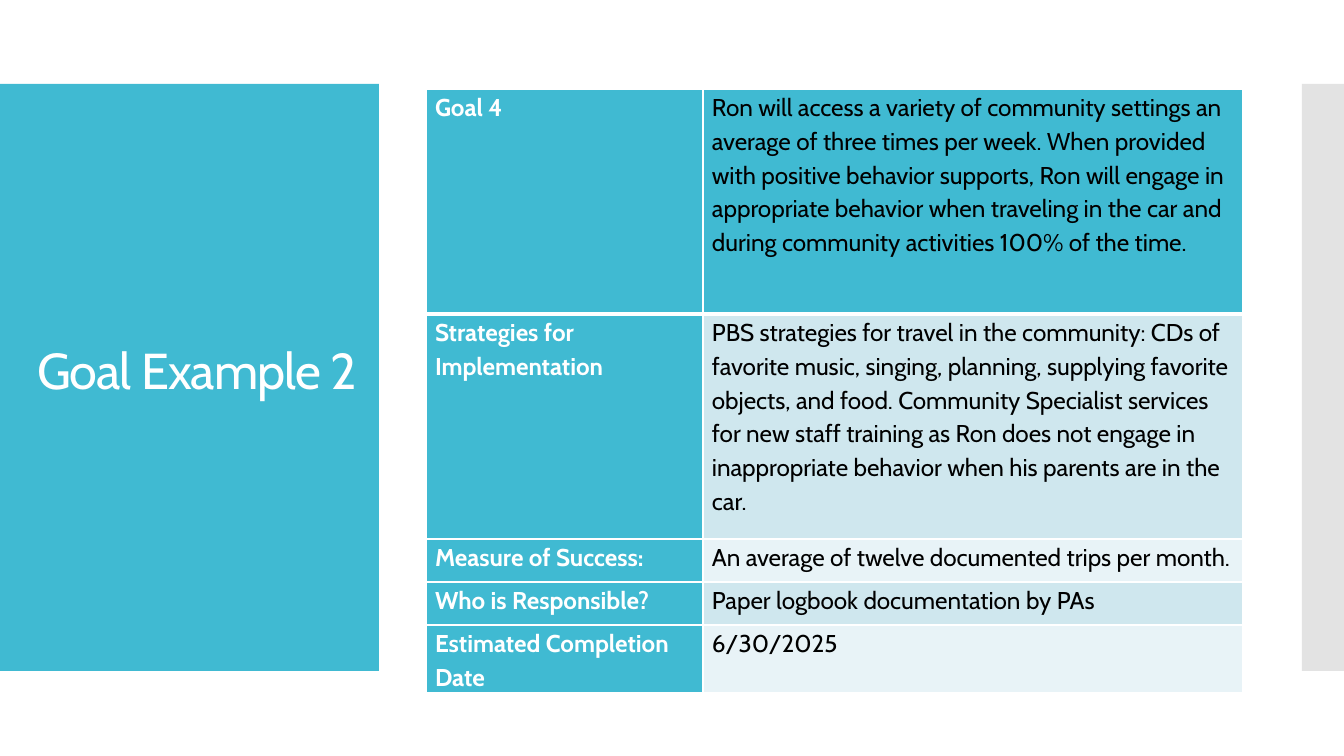
from pptx import Presentation
from pptx.dml.color import RGBColor
from pptx.enum.shapes import MSO_SHAPE
from pptx.enum.text import MSO_ANCHOR, MSO_AUTO_SIZE, PP_ALIGN
from pptx.oxml.ns import qn
from pptx.util import Pt
from lxml.etree import SubElement
from dataclasses import dataclass

EMU_PER_PX = 9144000 / 1344


@dataclass(frozen=True)
class Theme:
    font: str = "Cabin"
    accent: str = "40BAD2"
    side: str = "C8C8C8"
    white: str = "FFFFFF"
    black: str = "000000"
    bands: tuple = ("CFE7EE", "E8F3F7")
    title_size: int = 27
    cell_size: int = 13


THEME = Theme()

GOAL_ROWS = [
    ("Goal 4",
     "Ron will access a variety of community settings an average of three times "
     "per week. When provided with positive behavior supports, Ron will engage in "
     "appropriate behavior when traveling in the car and during community "
     "activities 100% of the time."),
    ("Strategies for Implementation",
     "PBS strategies for travel in the community: CDs of favorite music, singing, "
     "planning, supplying favorite objects, and food. Community Specialist services "
     "for new staff training as Ron does not engage in inappropriate behavior when "
     "his parents are in the car."),
    ("Measure of Success:", "An average of twelve documented trips per month."),
    ("Who is Responsible?", "Paper logbook documentation by PAs"),
    ("Estimated Completion Date", "6/30/2025"),
]
COL_WIDTHS = (277, 540)
ROW_HEIGHTS = (225, 225, 43, 43, 43)


def px(n):
    return round(n * EMU_PER_PX)


def set_attrs(obj, **values):
    for name, value in values.items():
        setattr(obj, name, value)


def style_run(r, size, color, bold=False):
    set_attrs(r.font, name=THEME.font, size=Pt(size), bold=bold)
    r.font.color.rgb = RGBColor.from_string(color)


def add_panel(s, x, y, w, h, color, opacity=100):
    sp = s.shapes.add_shape(MSO_SHAPE.RECTANGLE, px(x), px(y), px(w), px(h))
    sp.shadow.inherit = False
    sp.line.fill.background()
    sp.fill.solid()
    sp.fill.fore_color.rgb = RGBColor.from_string(color)
    if opacity < 100:
        clr = sp.fill._xPr.find(".//" + qn("a:srgbClr"))
        SubElement(clr, qn("a:alpha"), val=str(opacity * 1000))


def set_title(s, text, x, y, w, h):
    sp = s.shapes.title
    set_attrs(sp, left=px(x), top=px(y), width=px(w), height=px(h))
    tf = sp.text_frame
    inset = px(13)
    set_attrs(tf, word_wrap=True, auto_size=MSO_AUTO_SIZE.NONE,
              vertical_anchor=MSO_ANCHOR.BOTTOM, margin_left=inset,
              margin_right=inset, margin_top=inset, margin_bottom=inset)
    p = tf.paragraphs[0]
    p.alignment = PP_ALIGN.LEFT
    r = p.add_run()
    r.text = text
    style_run(r, THEME.title_size, THEME.white)
    r.font._element.set("spc", "-50")


def set_borders(cell, **widths):
    tc_pr = cell._tc.get_or_add_tcPr()
    for side in "LRTB":
        ln = SubElement(tc_pr, qn("a:ln" + side), w=str(Pt(widths.get(side, 1))))
        fill = SubElement(ln, qn("a:solidFill"))
        SubElement(fill, qn("a:srgbClr"), val=THEME.white)


def fill_cell(cell, text, fill, color, bold, borders):
    set_attrs(cell, margin_left=px(9), margin_right=px(9),
              margin_top=0, margin_bottom=0)
    set_borders(cell, **borders)
    cell.fill.solid()
    cell.fill.fore_color.rgb = RGBColor.from_string(fill)
    p = cell.text_frame.paragraphs[0]
    p.line_spacing = 1.15
    r = p.add_run()
    r.text = text
    style_run(r, THEME.cell_size, color, bold)


def add_goal_table(s, x, y):
    frame = s.shapes.add_table(len(GOAL_ROWS), len(COL_WIDTHS), px(x), px(y),
                               px(sum(COL_WIDTHS)), px(sum(ROW_HEIGHTS)))
    table = frame.table
    for col, width in zip(table.columns, COL_WIDTHS):
        col.width = px(width)
    for row, height in zip(table.rows, ROW_HEIGHTS):
        row.height = px(height)
    for i, (label, detail) in enumerate(GOAL_ROWS):
        borders = {0: {"B": 3}, 1: {"T": 3}}.get(i, {})
        band = THEME.bands[(i - 1) % 2] if i else THEME.accent
        fill_cell(table.cell(i, 0), label, THEME.accent, THEME.white, True, borders)
        fill_cell(table.cell(i, 1), detail, band, THEME.black, False, borders)


def main():
    prs = Presentation()
    set_attrs(prs, slide_width=px(1344), slide_height=px(756))
    s = prs.slides.add_slide(prs.slide_layouts[5])
    add_panel(s, 0, 84, 379, 587, THEME.accent)
    add_panel(s, 1302, 84, 42, 587, THEME.side, 50)
    title = s.shapes.title._element
    title.getparent().append(title)
    set_title(s, "Goal Example 2", 24, 89, 348, 324)
    add_goal_table(s, 426, 89)
    prs.save("out.pptx")


if __name__ == "__main__":
    main()
